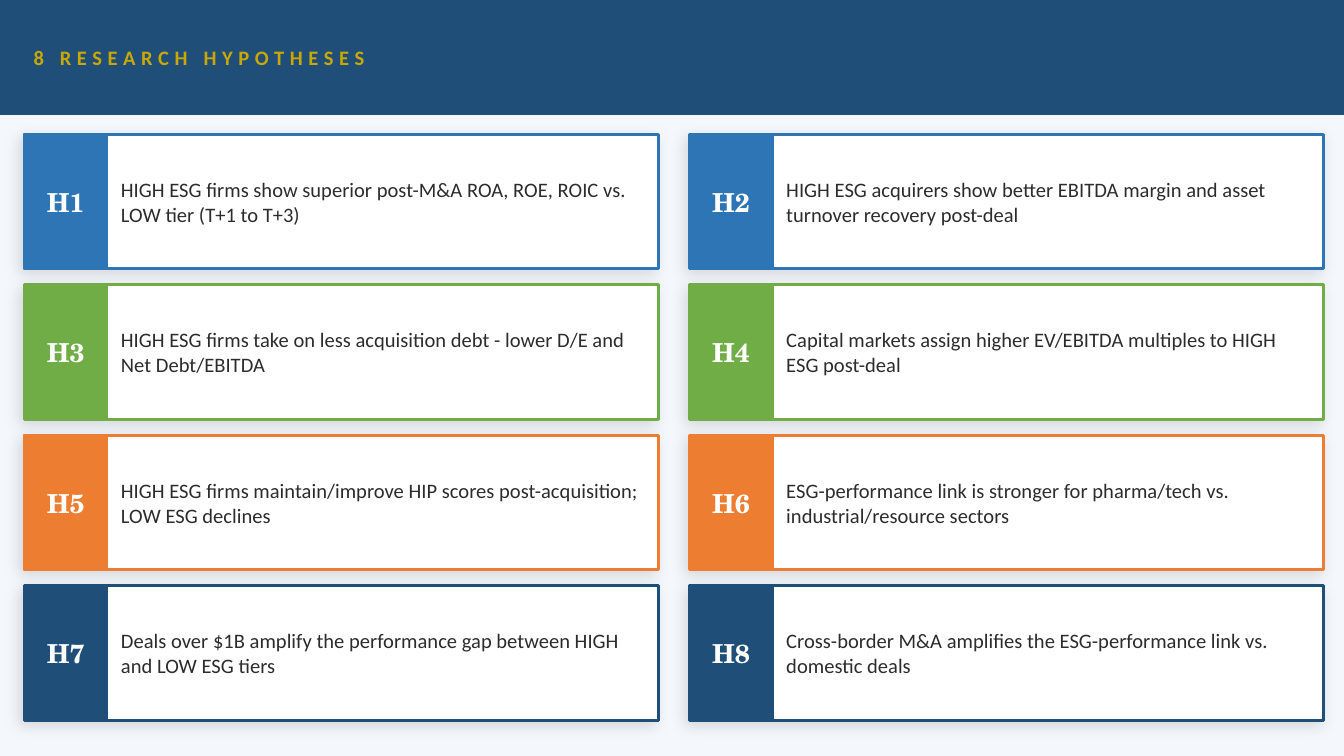
from lxml.etree import SubElement
from pptx import Presentation
from pptx.dml.color import RGBColor
from pptx.enum.shapes import MSO_SHAPE
from pptx.enum.text import MSO_ANCHOR, PP_ALIGN
from pptx.oxml.ns import qn
from pptx.util import Inches, Pt

COLORS = {
    "background": "F4F8FC",
    "navy": "1F4E79",
    "blue": "2E75B6",
    "green": "70AD47",
    "orange": "ED7D31",
    "gold": "C9A800",
    "white": "FFFFFF",
    "ink": "2C2C2C",
    "shadow": "000000",
}
ROW_COLORS = ["blue", "green", "orange", "navy"]
HYPOTHESES = [
    "HIGH ESG firms show superior post-M&A ROA, ROE, ROIC vs. LOW tier (T+1 to T+3)",
    "HIGH ESG acquirers show better EBITDA margin and asset turnover recovery post-deal",
    "HIGH ESG firms take on less acquisition debt - lower D/E and Net Debt/EBITDA",
    "Capital markets assign higher EV/EBITDA multiples to HIGH ESG post-deal",
    "HIGH ESG firms maintain/improve HIP scores post-acquisition; LOW ESG declines",
    "ESG-performance link is stronger for pharma/tech vs. industrial/resource sectors",
    "Deals over $1B amplify the performance gap between HIGH and LOW ESG tiers",
    "Cross-border M&A amplifies the ESG-performance link vs. domestic deals",
]


def rgb(name):
    return RGBColor.from_string(COLORS[name])


def add_panel(slide, box, fill, line, line_width=1):
    panel = slide.shapes.add_shape(MSO_SHAPE.RECTANGLE, *map(Inches, box))
    panel.shadow.inherit = False
    panel.fill.solid()
    panel.fill.fore_color.rgb = rgb(fill)
    panel.line.color.rgb = rgb(line)
    panel.line.width = Pt(line_width)
    return panel


def add_soft_shadow(panel):
    effects = panel.element.spPr.find(qn("a:effectLst"))
    shadow = SubElement(
        effects, qn("a:outerShdw"), blurRad=str(Pt(8)), dist=str(Pt(3)),
        dir=str(135 * 60000), algn="bl", rotWithShape="0",
    )
    tint = SubElement(shadow, qn("a:srgbClr"), val=COLORS["shadow"])
    SubElement(tint, qn("a:alpha"), val="12000")


def add_text(slide, box, text, size=11, font="Calibri", color="ink",
             bold=False, align=PP_ALIGN.LEFT, spacing=None):
    label = slide.shapes.add_textbox(*map(Inches, box))
    frame = label.text_frame
    frame.word_wrap = True
    frame.vertical_anchor = MSO_ANCHOR.MIDDLE
    frame.margin_left = frame.margin_right = 0
    frame.margin_top = frame.margin_bottom = 0
    paragraph = frame.paragraphs[0]
    paragraph.alignment = align
    run = paragraph.add_run()
    run.text = text
    run.font.size = Pt(size)
    run.font.name = font
    run.font.bold = bold
    run.font.color.rgb = rgb(color)
    if spacing:
        run.font._element.set("spc", str(spacing * 100))


def add_header(slide, box):
    left, top, width, height = box
    add_panel(slide, box, "navy", "navy")
    add_text(slide, (left + 0.25, top, width - 0.5, height),
             "8 RESEARCH HYPOTHESES", color="gold", bold=True, spacing=3)


def add_hypothesis(slide, box, code, statement, color):
    left, top, width, height = box
    badge = (left, top, 0.62, height)
    add_soft_shadow(add_panel(slide, box, "white", color, 1.5))
    add_panel(slide, badge, color, color)
    add_text(slide, badge, code, size=14, font="TeX Gyre Schola",
             color="white", bold=True, align=PP_ALIGN.CENTER)
    add_text(slide, (left + 0.72, top + 0.12, width - 0.84, height - 0.24),
             statement)


def add_hypothesis_grid(slide, box):
    left, top, width, height = box
    column_gap, row_gap = 0.23, 0.12
    rows = len(ROW_COLORS)
    card_width = (width - column_gap) / 2
    card_height = (height - row_gap * (rows - 1)) / rows
    for index, statement in enumerate(HYPOTHESES):
        row, column = divmod(index, 2)
        card = (left + column * (card_width + column_gap),
                top + row * (card_height + row_gap), card_width, card_height)
        add_hypothesis(slide, card, f"H{index + 1}", statement, ROW_COLORS[row])


def main():
    presentation = Presentation()
    presentation.slide_width = Inches(10)
    presentation.slide_height = Inches(10) * 9 // 16
    slide = presentation.slides.add_slide(presentation.slide_layouts[6])
    slide.background.fill.solid()
    slide.background.fill.fore_color.rgb = rgb("background")
    add_header(slide, (0, 0, 10, 0.85))
    add_hypothesis_grid(slide, (0.18, 1, 9.67, 4.36))
    presentation.save("out.pptx")


if __name__ == "__main__":
    main()
